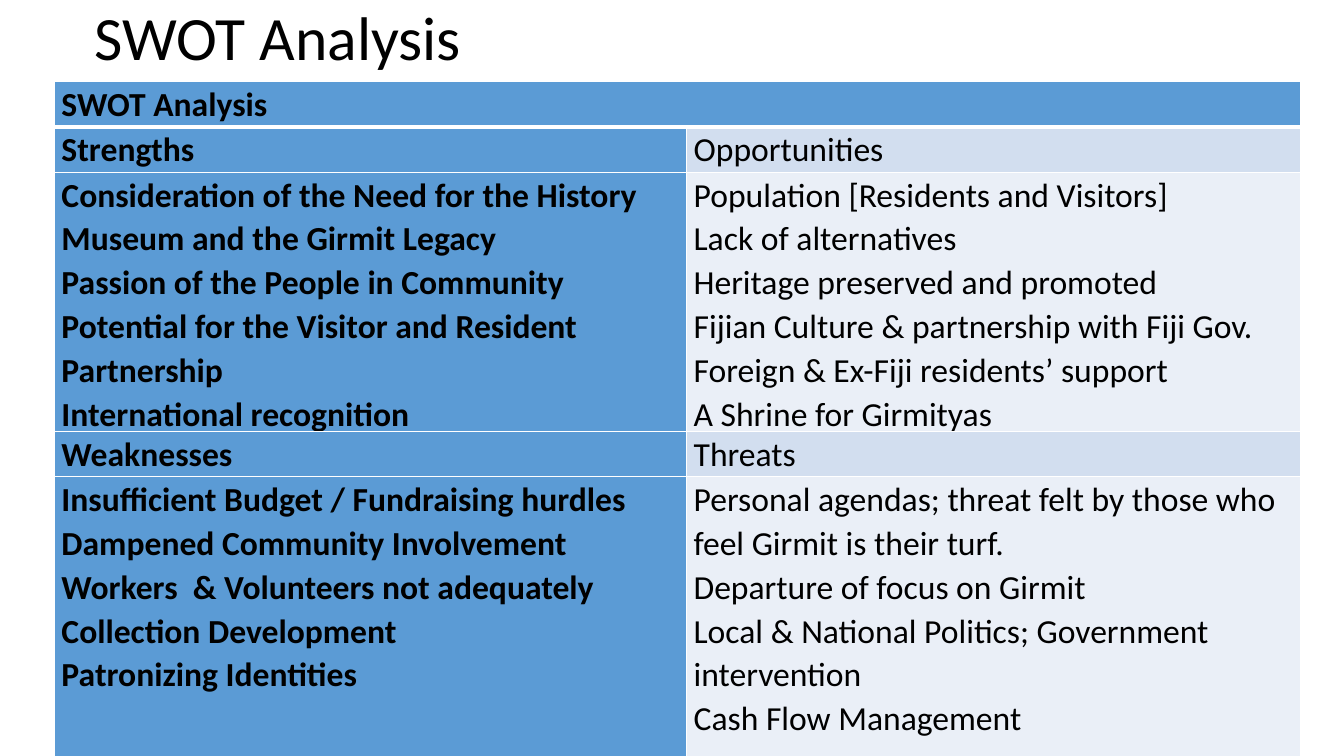
from dataclasses import dataclass

from lxml import etree
from pptx import Presentation
from pptx.dml.color import RGBColor
from pptx.enum.text import MSO_ANCHOR
from pptx.oxml.ns import qn
from pptx.util import Inches, Pt

MIDDLE, TOP = MSO_ANCHOR.MIDDLE, MSO_ANCHOR.TOP
BLACK = RGBColor(0x00, 0x00, 0x00)
WHITE = RGBColor(0xFF, 0xFF, 0xFF)
BLUE = RGBColor(0x5B, 0x9B, 0xD5)
LIGHT_BLUE = RGBColor(0xD2, 0xDE, 0xEF)
PALE_BLUE = RGBColor(0xEA, 0xEF, 0xF7)
FONT = "Calibri"

COL_WIDTHS = (6.27, 6.09)
HEADING_HEIGHT = 0.45


@dataclass
class Row:
    height: float
    left: list[str]
    right: list[str]
    right_fill: RGBColor


ROWS = [
    Row(HEADING_HEIGHT, ["Strengths"], ["Opportunities"], LIGHT_BLUE),
    Row(2.57,
        ["Consideration of the Need for the History Museum and the Girmit Legacy",
         "Passion of the People in Community",
         "Potential for the Visitor and Resident Partnership",
         "International recognition"],
        ["Population [Residents and Visitors]",
         "Lack of alternatives",
         "Heritage preserved and promoted",
         "Fijian Culture & partnership with Fiji Gov.",
         "Foreign & Ex-Fiji residents’ support",
         "A Shrine for Girmityas"],
        PALE_BLUE),
    Row(HEADING_HEIGHT, ["Weaknesses"], ["Threats"], LIGHT_BLUE),
    Row(2.78,
        ["Insufficient Budget / Fundraising hurdles",
         "Dampened Community Involvement",
         "Workers  & Volunteers not adequately",
         "Collection Development",
         "Patronizing Identities"],
        ["Personal agendas; threat felt by those who feel Girmit is their turf.",
         "Departure of focus on Girmit",
         "Local & National Politics; Government intervention",
         "Cash Flow Management"],
        PALE_BLUE),
]


def write(tf, lines: list[str], *, size: float = 24, bold: bool = False,
          spacing: float = 1.07) -> None:
    for i, line in enumerate(lines):
        p = tf.paragraphs[0] if i == 0 else tf.add_paragraph()
        p.line_spacing = spacing
        r = p.add_run()
        r.text = line
        r.font.name = FONT
        r.font.size = Pt(size)
        r.font.bold = bold
        r.font.color.rgb = BLACK


def set_borders(cell, bottom: float) -> None:
    tc_pr = cell._tc.get_or_add_tcPr()
    widths = {"a:lnL": 1, "a:lnR": 1, "a:lnT": 1, "a:lnB": bottom}
    for i, (tag, width) in enumerate(widths.items()):
        ln = etree.Element(qn(tag), w=str(Pt(width)))
        fill = etree.SubElement(ln, qn("a:solidFill"))
        etree.SubElement(fill, qn("a:srgbClr"), val=str(WHITE))
        tc_pr.insert(i, ln)


def fill_cell(cell, lines: list[str], fill: RGBColor, *, bold: bool,
              bottom: float = 1) -> None:
    cell.margin_left = cell.margin_right = Inches(0.07)
    cell.margin_top = cell.margin_bottom = 0
    cell.vertical_anchor = TOP
    cell.fill.solid()
    cell.fill.fore_color.rgb = fill
    set_borders(cell, bottom)
    write(cell.text_frame, lines, bold=bold)


def add_title(s) -> None:
    tf = s.shapes.add_textbox(Inches(0.84), 0, Inches(11.5), Inches(0.81)).text_frame
    tf.word_wrap = True
    tf.vertical_anchor = MIDDLE
    write(tf, ["SWOT Analysis"], size=44, spacing=0.9)


def add_swot_table(s) -> None:
    heights = [HEADING_HEIGHT] + [row.height for row in ROWS]
    table = s.shapes.add_table(len(heights), len(COL_WIDTHS), Inches(0.54), Inches(0.81),
                               Inches(sum(COL_WIDTHS)), Inches(sum(heights))).table
    for col, width in zip(table.columns, COL_WIDTHS):
        col.width = Inches(width)
    for table_row, height in zip(table.rows, heights):
        table_row.height = Inches(height)

    # Header across both columns
    header, header_end = table.cell(0, 0), table.cell(0, 1)
    header.merge(header_end)
    fill_cell(header, ["SWOT Analysis"], BLUE, bold=True, bottom=3)
    set_borders(header_end, 3)

    # Quadrants
    for i, row in enumerate(ROWS, start=1):
        fill_cell(table.cell(i, 0), row.left, BLUE, bold=True)
        fill_cell(table.cell(i, 1), row.right, row.right_fill, bold=False)


def main() -> None:
    prs = Presentation()
    prs.slide_width, prs.slide_height = Inches(13.33), Inches(7.5)
    s = prs.slides.add_slide(prs.slide_layouts[6])
    add_title(s)
    add_swot_table(s)
    prs.save("out.pptx")


if __name__ == "__main__":
    main()
